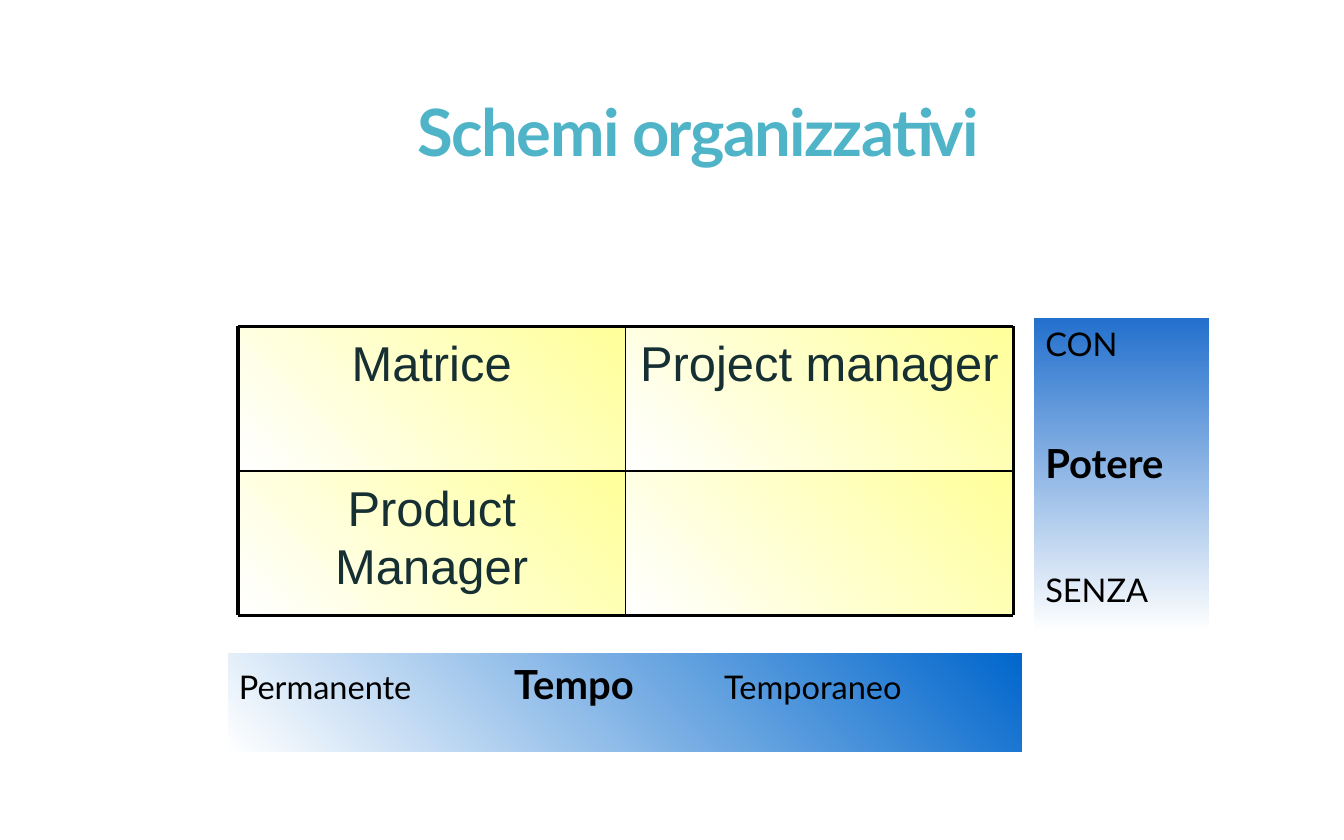
"""Build the 'Schemi organizzativi' slide: a power and time matrix with its two axes."""
from dataclasses import dataclass

from lxml.etree import SubElement
from pptx import Presentation
from pptx.dml.color import RGBColor
from pptx.enum.shapes import MSO_CONNECTOR, MSO_SHAPE
from pptx.enum.text import MSO_ANCHOR, PP_ALIGN
from pptx.oxml.ns import qn
from pptx.util import Inches, Pt


@dataclass(frozen=True)
class Theme:
    heading_font: str = "Lato"
    matrix_font: str = "Arial"
    heading: str = "50B4C8"
    matrix_text: str = "162F33"
    black: str = "000000"
    white: str = "FFFFFF"
    yellow: str = "FFFF99"
    time_blue: str = "0066CC"
    power_blue: str = "2370CD"
    title_size: float = 44
    matrix_size: float = 33
    axis_size: float = 27
    end_size: float = 22


theme = Theme()


def add_panel(left, top, width, height, start, end, angle):
    panel = slide.shapes.add_shape(
        MSO_SHAPE.RECTANGLE, Inches(left), Inches(top), Inches(width), Inches(height))
    panel.shadow.inherit = False
    panel.line.fill.background()
    panel.fill.gradient()
    panel.fill.gradient_angle = angle
    for stop, color in zip(panel.fill.gradient_stops, (start, end)):
        stop.color.rgb = RGBColor.from_string(color)
    frame = panel.text_frame
    frame.word_wrap = True
    frame.vertical_anchor = MSO_ANCHOR.TOP
    frame.margin_left = frame.margin_right = Inches(0.11)
    frame.margin_top = frame.margin_bottom = Inches(0.06)
    return panel


def add_run(paragraph, text, font, size, color, bold=False):
    run = paragraph.add_run()
    run.text = text
    run.font.name = font
    run.font.size = Pt(size)
    run.font.bold = bold
    run.font.color.rgb = RGBColor.from_string(color)
    return run


presentation = Presentation()
presentation.slide_width = Inches(12.6)
presentation.slide_height = Inches(12.6 * 10 / 16)
slide = presentation.slides.add_slide(presentation.slide_layouts[6])

title = slide.shapes.add_textbox(Inches(1.18), Inches(0.63), Inches(10.74), Inches(1.31))
title.text_frame.word_wrap = True
title.text_frame.vertical_anchor = MSO_ANCHOR.MIDDLE
heading = title.text_frame.paragraphs[0]
heading.alignment = PP_ALIGN.CENTER
heading.line_spacing = 0.85
heading_run = add_run(heading, "Schemi organizzativi", theme.heading_font,
                      theme.title_size, theme.heading, True)
heading_run.font._element.set("spc", "-110")

matrix_left, matrix_top = 2.23, 3.06
matrix_right, matrix_bottom = 9.5, 5.77
cell_width = (matrix_right - matrix_left) / 2
cell_height = (matrix_bottom - matrix_top) / 2
roles = [["Matrice", "Project manager"], ["Product Manager", ""]]
for row, row_roles in enumerate(roles):
    for column, role in enumerate(row_roles):
        quadrant = add_panel(matrix_left + column * cell_width, matrix_top + row * cell_height,
                             cell_width, cell_height, theme.white, theme.yellow, 45)
        if role:
            paragraph = quadrant.text_frame.paragraphs[0]
            paragraph.alignment = PP_ALIGN.CENTER
            paragraph.space_before = Pt(2)
            add_run(paragraph, role, theme.matrix_font, theme.matrix_size, theme.matrix_text)

for step, weight in enumerate((2.25, 1, 2.25)):
    x = matrix_left + step * cell_width
    y = matrix_top + step * cell_height
    for ends in ((matrix_left, y, matrix_right, y), (x, matrix_top, x, matrix_bottom)):
        border = slide.shapes.add_connector(MSO_CONNECTOR.STRAIGHT, *map(Inches, ends))
        border.line.color.rgb = RGBColor.from_string(theme.black)
        border.line.width = Pt(weight)
        SubElement(border._element.spPr, qn("a:effectLst"))

time_axis = add_panel(2.13, 6.12, 7.46, 0.94, theme.white, theme.time_blue, 45)
power_axis = add_panel(9.69, 2.98, 1.65, 2.94, theme.power_blue, theme.white, 270)
for axis in (time_axis, power_axis):
    axis.line.color.rgb = RGBColor.from_string(theme.white)
    axis.line.width = Pt(0.75)

time_scale = time_axis.text_frame.paragraphs[0]
time_scale.alignment = PP_ALIGN.LEFT
tab_stops = SubElement(time_scale._p.get_or_add_pPr(), qn("a:tabLst"))
for position in (2.58, 4.55):
    SubElement(tab_stops, qn("a:tab"), pos=str(Inches(position)), algn="l")
for label, size, bold in (("Permanente", theme.end_size, False),
                          ("\tTempo", theme.axis_size, True),
                          ("\tTemporaneo", theme.end_size, False)):
    add_run(time_scale, label, theme.heading_font, size, theme.black, bold)

power_levels = (("CON", theme.end_size, False, 0),
                ("Potere", theme.axis_size, True, 51),
                ("SENZA", theme.end_size, False, 56))
for index, (label, size, bold, gap) in enumerate(power_levels):
    frame = power_axis.text_frame
    level = frame.add_paragraph() if index else frame.paragraphs[0]
    level.alignment = PP_ALIGN.LEFT
    level.space_before = Pt(gap)
    add_run(level, label, theme.heading_font, size, theme.black, bold)

presentation.save("out.pptx")
